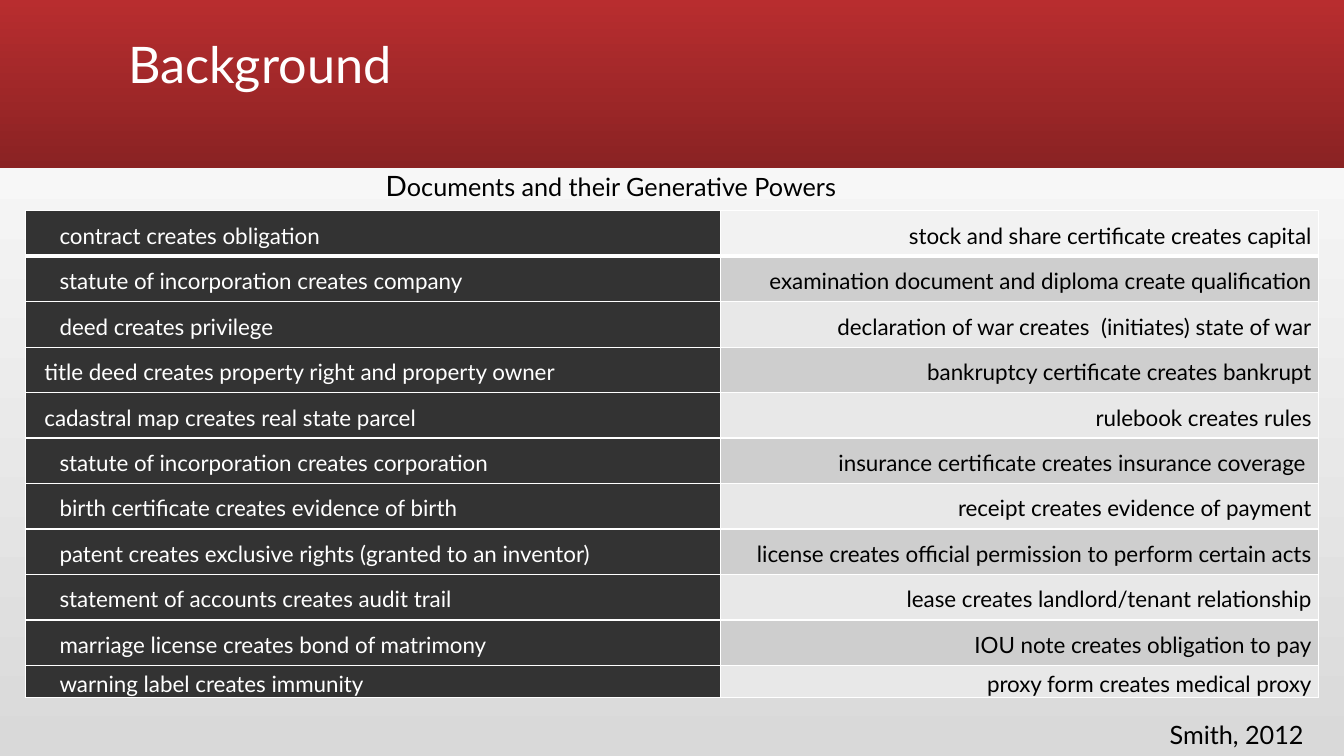
from lxml.etree import SubElement
from pptx import Presentation
from pptx.dml.color import RGBColor
from pptx.enum.shapes import MSO_SHAPE as Shape
from pptx.enum.text import MSO_ANCHOR as Anchor, MSO_AUTO_SIZE as AutoSize, PP_ALIGN as Align
from pptx.oxml.ns import qn
from pptx.util import Inches, Pt

WIDTH, HEIGHT = Inches(13.33), Inches(7.5)
FONT = "Lato"
COLORS = {
    "white": "FFFFFF", "black": "000000", "mist": "D9D9D9",
    "red": "B82D2F", "dark red": "8A2223", "charcoal": "333333",
    "top row": "F2F2F2", "dark band": "CECECE", "light band": "E8E8E8",
}
POWERS = [
    ("contract creates obligation", "stock and share certificate creates capital"),
    ("statute of incorporation creates company",
     "examination document and diploma create qualification"),
    ("deed creates privilege", "declaration of war creates  (initiates) state of war"),
    ("title deed creates property right and property owner",
     "bankruptcy certificate creates bankrupt"),
    ("cadastral map creates real state parcel", "rulebook creates rules"),
    ("statute of incorporation creates corporation",
     "insurance certificate creates insurance coverage "),
    ("birth certificate creates evidence of birth", "receipt creates evidence of payment"),
    ("patent creates exclusive rights (granted to an inventor)",
     "license creates official permission to perform certain acts"),
    ("statement of accounts creates audit trail", "lease creates landlord/tenant relationship"),
    ("marriage license creates bond of matrimony", "IOU note creates obligation to pay"),
    ("warning label creates immunity", "proxy form creates medical proxy"),
]
FLUSH_ROWS = (3, 4)  # left cells without a first-line indent
COLUMN_SHARES = (51.72, 44.52)
ROW_SHARES = [6.02] * (len(POWERS) - 1) + [4.2]


def across(percent):
    return round(WIDTH * percent / 100)


def down(percent):
    return round(HEIGHT * percent / 100)


def area(left, top, width, height):
    """Turn percentages of the slide into a position and size."""
    return across(left), down(top), across(width), down(height)


def color(name):
    return RGBColor.from_string(COLORS[name])


def fill_gradient(fill, start, end, angle):
    fill.gradient()
    fill.gradient_angle = angle
    for stop, name in zip(fill.gradient_stops, (start, end)):
        stop.color.rgb = color(name)


def add_span(para, text, size, name):
    span = para.add_run()
    span.text = text
    span.font.name = FONT
    span.font.size = Pt(size)
    span.font.color.rgb = color(name)


def add_banner(page):
    banner = page.shapes.add_shape(Shape.RECTANGLE, *area(0, 0, 100, 22.22))
    banner.shadow.inherit = False
    banner.line.fill.background()
    fill_gradient(banner.fill, "red", "dark red", 270)
    page.shapes._spTree.insert(2, banner._element)  # behind the title


def set_title(page, text):
    title = page.shapes.title
    title.left, title.top, title.width, title.height = area(8.78, 1.47, 82.5, 14.93)
    frame = title.text_frame
    frame.auto_size = AutoSize.NONE
    frame.vertical_anchor = Anchor.MIDDLE
    para = frame.paragraphs[0]
    para.alignment = Align.LEFT
    para.line_spacing = 0.9
    add_span(para, text, 36, "white")


def add_text(page, place, align, spans):
    box = page.shapes.add_textbox(*area(*place))
    box.text_frame.word_wrap = True
    para = box.text_frame.paragraphs[0]
    para.alignment = align
    for text, size in spans:
        add_span(para, text, size, "black")


def add_borders(cell, widths):
    """Draw white borders, given a width in points for each side."""
    properties = cell._tc.get_or_add_tcPr()
    for side, width in widths.items():
        line = SubElement(properties, qn(f"a:ln{side}"), w=str(Pt(width)))
        paint = SubElement(line, qn("a:solidFill"))
        SubElement(paint, qn("a:srgbClr"), val=COLORS["white"])


def fill_cell(cell, text, row, column):
    add_borders(cell, {"L": 1, "R": 1, "T": 3 if row == 1 else 1, "B": 3 if row == 0 else 1})
    band = "top row" if row == 0 else ("light band", "dark band")[row % 2]
    cell.fill.solid()
    cell.fill.fore_color.rgb = color(band if column else "charcoal")
    cell.vertical_anchor = Anchor.MIDDLE
    cell.margin_left = cell.margin_right = Inches(0.07)
    cell.margin_top = cell.margin_bottom = 0
    para = cell.text_frame.paragraphs[0]
    para.alignment = Align.RIGHT if column else Align.LEFT
    para.line_spacing = 1.15
    flush = column == 0 and row in FLUSH_ROWS
    indents = para._p.get_or_add_pPr()
    indents.set("marL", str(0 if column else Inches(0.12)))
    indents.set("indent", str(0 if flush else Inches(0.15)))
    add_span(para, text, 16, "black" if column else "white")


def add_powers_table(page):
    place = area(1.88, 27.87, sum(COLUMN_SHARES), sum(ROW_SHARES))
    table = page.shapes.add_table(len(POWERS), len(COLUMN_SHARES), *place).table
    table.first_row = table.horz_banding = False
    for column, share in zip(table.columns, COLUMN_SHARES):
        column.width = across(share)
    for row, share in zip(table.rows, ROW_SHARES):
        row.height = down(share)
    for row, texts in enumerate(POWERS):
        for column, text in enumerate(texts):
            fill_cell(table.cell(row, column), text, row, column)


def main():
    deck = Presentation()
    deck.slide_width, deck.slide_height = WIDTH, HEIGHT
    page = deck.slides.add_slide(deck.slide_layouts.get_by_name("Title Only"))
    fill_gradient(page.background.fill, "mist", "white", 90)
    add_banner(page)
    set_title(page, "Background")
    add_text(page, (13.35, 21.6, 64.2, 5.87), Align.CENTER,
             [("D", 20), ("ocuments and their Generative Powers", 18)])
    add_powers_table(page)
    add_text(page, (82.5, 94.53, 15.23, 5.33), Align.RIGHT, [("Smith, 2012", 18)])
    deck.save("out.pptx")


if __name__ == "__main__":
    main()
